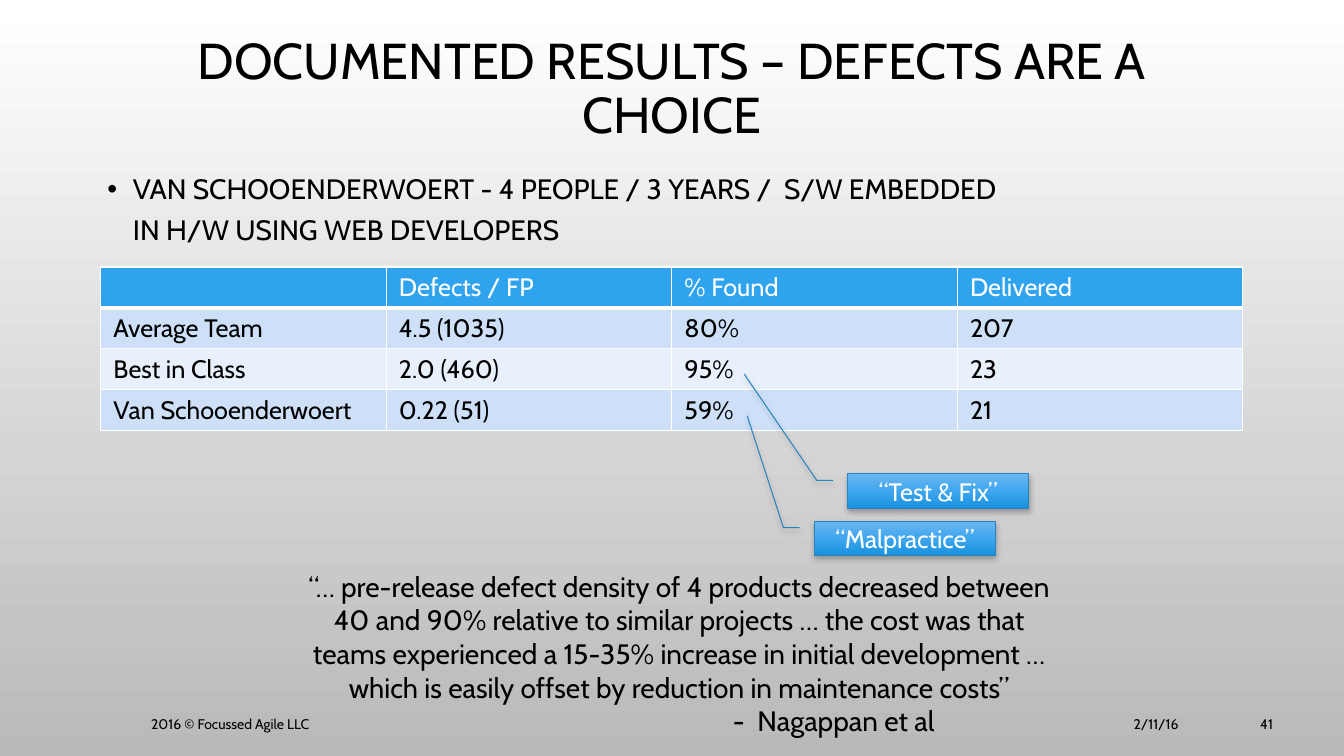
"""Build the slide about documented defect results."""
from dataclasses import dataclass

import lxml.etree
import pptx
import pptx.dml.color
import pptx.enum.shapes
import pptx.enum.text
import pptx.oxml.ns
import pptx.util

Cm = pptx.util.Cm
ALIGN = pptx.enum.text.PP_ALIGN
ANCHOR = pptx.enum.text.MSO_ANCHOR
qn = pptx.oxml.ns.qn


@dataclass(frozen=True)
class Theme:
    """Colours and type sizes of the slide."""
    font: str = "Cabin"
    text: str = "000000"
    light: str = "FFFFFF"
    header: str = "2FA3EE"
    bands: tuple = ("CDE0F8", "E8F0FC")
    background: tuple = ((0, "FFFFFF"), (100, "B9B9B9"))
    callout: tuple = ((0, "6CB6F1"), (50, "3FA6EE"), (100, "1891DF"))
    callout_line: str = "2683BF"
    title_size: int = 36
    body_size: int = 20
    table_size: int = 18
    footer_size: int = 10


THEME = Theme()

RESULTS = (
    ("", "Defects / FP", "% Found", "Delivered"),
    ("Average Team", "4.5 (1035)", "80%", "207"),
    ("Best in Class", "2.0 (460)", "95%", "23"),
    ("Van Schooenderwoert", "0.22 (51)", "59%", "21"),
)


def rgb(value):
    """Return a colour object for a hex value."""
    return pptx.dml.color.RGBColor.from_string(value)


def add_element(parent, tag, **attributes):
    """Append an XML element with the given attributes."""
    element = lxml.etree.SubElement(parent, qn(tag))
    for name, value in attributes.items():
        element.set(name, str(value))
    return element


def fill_gradient(fill, owner, stops):
    """Give a fill a gradient that runs from top to bottom."""
    fill.gradient()
    fill.gradient_angle = 270
    stop_list = owner.xpath(".//a:gsLst")[0]
    for stop in list(stop_list):
        stop_list.remove(stop)
    for position, color in stops:
        stop = add_element(stop_list, "a:gs", pos=position * 1000)
        add_element(stop, "a:srgbClr", val=color)


def style_text(text_frame, size, color=THEME.text, align=ALIGN.LEFT):
    """Format every paragraph of a text frame."""
    for paragraph in text_frame.paragraphs:
        paragraph.alignment = align
        for run in paragraph.runs:
            run.font.name = THEME.font
            run.font.size = pptx.util.Pt(size)
            run.font.bold = False
            run.font.color.rgb = rgb(color)


def add_text(slide, box, text, size, align=ALIGN.LEFT, anchor=ANCHOR.TOP):
    """Add a wrapping text box and return its text frame."""
    text_frame = slide.shapes.add_textbox(*map(Cm, box)).text_frame
    text_frame.word_wrap = True
    text_frame.vertical_anchor = anchor
    text_frame.text = text
    style_text(text_frame, size, align=align)
    return text_frame


def add_title(slide, box):
    """Add the slide title."""
    text_frame = add_text(slide, box, "DOCUMENTED RESULTS – DEFECTS ARE A CHOICE",
                          THEME.title_size, ALIGN.CENTER, ANCHOR.MIDDLE)
    text_frame.paragraphs[0].line_spacing = 0.9


def add_study_bullet(slide, box):
    """Add the bullet that describes the study."""
    text_frame = add_text(
        slide, box,
        "VAN SCHOOENDERWOERT - 4 PEOPLE / 3 YEARS /  S/W EMBEDDED IN H/W USING WEB DEVELOPERS",
        THEME.body_size)
    paragraph = text_frame.paragraphs[0]
    paragraph.line_spacing = 1.2
    properties = paragraph._p.get_or_add_pPr()
    indent = Cm(0.64)
    properties.set("marL", str(indent))
    properties.set("indent", str(-indent))
    add_element(add_element(properties, "a:buClr"), "a:srgbClr", val=THEME.text)
    add_element(properties, "a:buFont", typeface="Arial")
    add_element(properties, "a:buChar", char="•")


def add_borders(cell, bottom_width):
    """Draw white borders around a table cell."""
    properties = cell._tc.get_or_add_tcPr()
    for side, width in (("L", 1), ("R", 1), ("T", 1), ("B", bottom_width)):
        line = add_element(properties, f"a:ln{side}", w=pptx.util.Pt(width))
        add_element(add_element(line, "a:solidFill"), "a:srgbClr", val=THEME.light)


def add_results_table(slide, box):
    """Add the table that compares the teams."""
    table = slide.shapes.add_table(len(RESULTS), len(RESULTS[0]), *map(Cm, box)).table
    for row_index, values in enumerate(RESULTS):
        is_header = row_index == 0
        fill = THEME.header if is_header else THEME.bands[(row_index - 1) % 2]
        for column_index, value in enumerate(values):
            cell = table.cell(row_index, column_index)
            cell.text = value
            cell.margin_left = cell.margin_right = Cm(0.32)
            add_borders(cell, 3 if is_header else 1)
            cell.fill.solid()
            cell.fill.fore_color.rgb = rgb(fill)
            style_text(cell.text_frame, THEME.table_size,
                       THEME.light if is_header else THEME.text)


def add_callout(slide, box, text, target):
    """Add a callout whose leader ends at a target in shares of its box."""
    shape = slide.shapes.add_shape(pptx.enum.shapes.MSO_SHAPE.LINE_CALLOUT_2, *map(Cm, box))
    target_x, target_y = target
    for index, value in enumerate((0.19, -0.08, 0.19, -0.17, target_y, target_x)):
        shape.adjustments[index] = value
    fill_gradient(shape.fill, shape._element, THEME.callout)
    shape.line.color.rgb = rgb(THEME.callout_line)
    shape.line.width = pptx.util.Pt(0.75)
    shape.shadow.inherit = False
    effects = shape._element.spPr.find(qn("a:effectLst"))
    shadow = add_element(effects, "a:outerShdw", blurRad=pptx.util.Pt(4),
                         dist=pptx.util.Pt(2), dir=90 * 60000, rotWithShape=0)
    color = add_element(shadow, "a:srgbClr", val=THEME.text)
    add_element(color, "a:alpha", val=28000)
    shape.text_frame.text = text
    shape.text_frame.vertical_anchor = ANCHOR.MIDDLE
    style_text(shape.text_frame, THEME.table_size, THEME.light, ALIGN.CENTER)


def add_quote(slide, box):
    """Add the quotation and its indented attribution."""
    text_frame = add_text(
        slide, box,
        "“… pre-release defect density of 4 products decreased between 40 and 90% relative to "
        "similar projects … the cost was that teams experienced a 15-35% increase in initial "
        "development … which is easily offset by reduction in maintenance costs”\n"
        "-  Nagappan et al",
        THEME.body_size, ALIGN.CENTER)
    attribution = text_frame.paragraphs[1]
    attribution.alignment = ALIGN.LEFT
    attribution._p.get_or_add_pPr().set("marL", str(Cm(10.7)))


def add_footer(slide, top, height):
    """Add the copyright line, date and slide number."""
    for left, width, text, align in (
            (3.56, 18.54, "2016 © Focussed Agile LLC", ALIGN.LEFT),
            (22.33, 7.62, "2/11/16", ALIGN.RIGHT),
            (30.2, 2.13, "41", ALIGN.RIGHT)):
        add_text(slide, (left, top, width, height), text,
                 THEME.footer_size, align, ANCHOR.MIDDLE)


def main():
    """Build and save the presentation."""
    presentation = pptx.Presentation()
    presentation.slide_width = Cm(33.87)
    presentation.slide_height = Cm(19.05)
    slide = presentation.slides.add_slide(presentation.slide_layouts[6])
    fill_gradient(slide.background.fill, slide._element, THEME.background)
    add_title(slide, (2.54, 0.05, 28.78, 4.45))
    add_results_table(slide, (2.54, 6.73, 28.78, 4.12))
    add_study_bullet(slide, (2.46, 4.04, 23.5, 15))
    add_callout(slide, (20.52, 13.13, 4.57, 0.87), "“Malpractice”", (-0.37, -3.05))
    add_callout(slide, (21.36, 11.94, 4.57, 0.87), "“Test & Fix”", (-0.57, -2.89))
    add_quote(slide, (7.52, 14.22, 19.2, 4.14))
    add_footer(slide, 17.73, 1.02)
    presentation.save("out.pptx")


if __name__ == "__main__":
    main()
